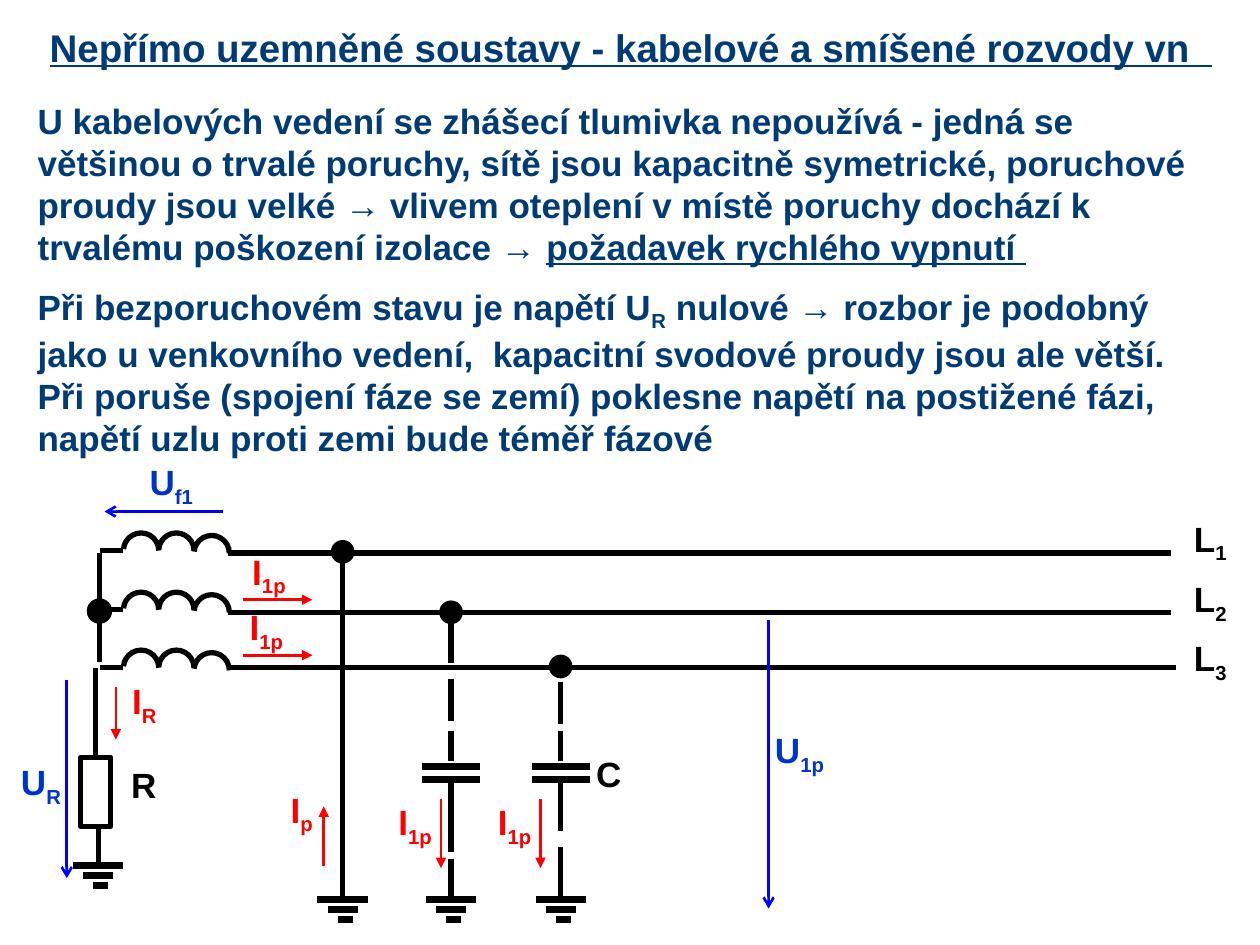
from dataclasses import dataclass
from typing import Optional

from lxml.etree import SubElement
from pptx import Presentation
from pptx.dml.color import RGBColor
from pptx.enum.dml import MSO_LINE_DASH_STYLE as DASH
from pptx.enum.shapes import MSO_CONNECTOR as CONN, MSO_SHAPE as SHAPE
from pptx.enum.text import MSO_ANCHOR as ANCHOR, PP_ALIGN as ALIGN
from pptx.oxml.ns import qn
from pptx.util import Emu, Pt

PX = 9144
FONT = "Arial"
COLORS = {
    "text": "003B76",
    "black": "000000",
    "current": "FF0000",
    "voltage": "0000FF",
    "voltage_label": "0033CC",
}


@dataclass(frozen=True)
class Wire:
    x1: int
    y1: int
    x2: int
    y2: int
    color: str = "black"
    width: float = 3
    dash: Optional[DASH] = None
    arrow: Optional[str] = None


@dataclass(frozen=True)
class Label:
    x: int
    y: int
    w: int
    h: int
    base: str
    sub: str = ""
    color: str = "black"


@dataclass(frozen=True)
class Phase:
    name: str
    coil_y: int
    line_y: int
    end_x: int
    label_y: int


@dataclass(frozen=True)
class Ground:
    x: int
    y: int
    stem_y: int


@dataclass(frozen=True)
class Node:
    x: int
    y: int
    width: int = 2


PHASES = [
    Phase("1", 437, 439, 929, 413),
    Phase("2", 484, 486, 929, 461),
    Phase("3", 530, 530, 933, 508),
]
GROUNDS = [Ground(78, 687, 656)] + [Ground(x, 714, 682) for x in (272, 358, 445)]
CAPACITORS = [358, 445]
NODES = [Node(79, 485, 3), Node(272, 438), Node(358, 486), Node(445, 529)]
WIRES = [
    Wire(79, 525, 79, 439),
    Wire(76, 530, 76, 601),
    Wire(272, 446, 272, 682),
    Wire(358, 493, 358, 580, dash=DASH.LONG_DASH),
    Wire(445, 541, 445, 580, dash=DASH.LONG_DASH),
    Wire(358, 643, 358, 682, dash=DASH.LONG_DASH),
    Wire(445, 643, 445, 682, dash=DASH.DASH),
]
CURRENTS = [
    (257, 687, 257, 640),
    (350, 634, 350, 689),
    (429, 634, 429, 689),
    (193, 476, 248, 476),
    (193, 520, 248, 520),
    (92, 545, 92, 587),
]
VOLTAGES = [(53, 540, 53, 697), (177, 406, 83, 406), (610, 492, 610, 721)]
LABELS = [
    Label(100, 602, 28, 41, "R"),
    Label(469, 593, 28, 41, "C"),
    Label(12, 602, 41, 41, "U", "R", "voltage_label"),
    Label(114, 364, 44, 41, "U", "f1", "voltage_label"),
    Label(610, 577, 49, 41, "U", "1p", "voltage_label"),
    Label(311, 634, 37, 41, "I", "1p", "current"),
    Label(390, 634, 37, 41, "I", "1p", "current"),
    Label(195, 435, 37, 41, "I", "1p", "current"),
    Label(193, 479, 37, 41, "I", "1p", "current"),
    Label(100, 538, 29, 41, "I", "R", "current"),
    Label(226, 624, 27, 41, "I", "p", "current"),
]


def px(n: int) -> Emu:
    return Emu(n * PX)


def rgb(name: str) -> RGBColor:
    return RGBColor.from_string(COLORS[name])


def set_font(p, size: int, color: str) -> None:
    p.font.name = FONT
    p.font.size = Pt(size)
    p.font.bold = True
    p.font.color.rgb = rgb(color)


def add_run(p, text: str, sub: bool = False, underline: bool = False) -> None:
    r = p.add_run()
    r.text = text
    if sub:
        r._r.get_or_add_rPr().set("baseline", "-25000")
    if underline:
        r.font.underline = True


def add_text_frame(s, x: int, y: int, w: int, h: int, wrap: bool = True):
    tf = s.shapes.add_textbox(px(x), px(y), px(w), px(h)).text_frame
    tf.word_wrap = wrap
    return tf


def add_wire(s, wire: Wire) -> None:
    sp = s.shapes.add_connector(
        CONN.STRAIGHT, px(wire.x1), px(wire.y1), px(wire.x2), px(wire.y2))
    sp.line.color.rgb = rgb(wire.color)
    sp.line.width = Pt(wire.width)
    if wire.dash is not None:
        sp.line.dash_style = wire.dash
    if wire.arrow:
        SubElement(sp.line._get_or_add_ln(), qn("a:tailEnd"), type=wire.arrow)
    SubElement(sp._element.spPr, qn("a:effectLst"))


def add_outline(s, kind: SHAPE, x: int, y: int, w: int, h: int, width: float = 3):
    sp = s.shapes.add_shape(kind, px(x), px(y), px(w), px(h))
    sp.shadow.inherit = False
    sp.fill.background()
    sp.line.color.rgb = rgb("black")
    sp.line.width = Pt(width)
    return sp


def add_label(s, label: Label) -> None:
    tf = add_text_frame(s, label.x, label.y, label.w, label.h, wrap=False)
    tf.margin_left = tf.margin_right = tf.margin_top = tf.margin_bottom = px(4)
    tf.vertical_anchor = ANCHOR.MIDDLE
    p = tf.paragraphs[0]
    p.alignment = ALIGN.CENTER
    set_font(p, 20, label.color)
    add_run(p, label.base)
    if label.sub:
        add_run(p, label.sub, sub=True)


def add_phase(s, phase: Phase) -> None:
    add_wire(s, Wire(181, phase.line_y, phase.end_x, phase.line_y))
    add_wire(s, Wire(98, phase.coil_y, 79, phase.coil_y))
    for i, drop in enumerate((0, 0, 2)):
        sp = add_outline(s, SHAPE.ARC, 98 + 28 * i, phase.coil_y - 14 + drop, 28, 28)
        sp.adjustments[0] = 111
        sp.adjustments[1] = 0
    add_label(s, Label(941, phase.label_y, 39, 33, "L", phase.name))


def add_ground(s, ground: Ground) -> None:
    add_wire(s, Wire(ground.x, ground.stem_y, ground.x, ground.y))
    for dx, dy, half in ((0, 0, 20), (0, 8, 12), (2, 16, 6)):
        x, y = ground.x + dx, ground.y + dy
        add_wire(s, Wire(x - half, y, x + half, y, width=4))


def add_capacitor(s, x: int) -> None:
    for y in (608, 619):
        add_wire(s, Wire(x - 23, y, x + 23, y, width=4))
    for top in (580, 619):
        add_wire(s, Wire(x, top, x, top + 24))


def add_node(s, node: Node) -> None:
    sp = add_outline(s, SHAPE.OVAL, node.x - 8, node.y - 8, 16, 16, node.width)
    sp.fill.solid()
    sp.fill.fore_color.rgb = rgb("black")


def add_texts(s) -> None:
    tf = add_text_frame(s, 20, 13, 961, 48)
    tf.vertical_anchor = ANCHOR.MIDDLE
    p = tf.paragraphs[0]
    p.alignment = ALIGN.CENTER
    set_font(p, 22, "text")
    p.font.underline = True
    add_run(p, "Nepřímo uzemněné soustavy - kabelové a smíšené rozvody vn  ")

    tf = add_text_frame(s, 20, 74, 961, 296)
    p = tf.paragraphs[0]
    set_font(p, 20, "text")
    add_run(p, "U kabelových vedení se zhášecí tlumivka nepoužívá - jedná se většinou "
               "o trvalé poruchy, sítě jsou kapacitně symetrické, poruchové proudy jsou "
               "velké → vlivem oteplení v místě poruchy dochází k trvalému poškození "
               "izolace → ")
    add_run(p, "požadavek rychlého vypnutí ", underline=True)
    p = tf.add_paragraph()
    set_font(p, 20, "text")
    p.space_before = Pt(10)
    add_run(p, "Při bezporuchovém stavu je napětí U")
    add_run(p, "R", sub=True)
    add_run(p, " nulové → rozbor je podobný jako u venkovního vedení,  kapacitní "
               "svodové proudy jsou ale větší.")
    p = tf.add_paragraph()
    set_font(p, 20, "text")
    add_run(p, "Při poruše (spojení fáze se zemí) poklesne napětí na postižené fázi, "
               "napětí uzlu proti zemi bude téměř fázové")


def main() -> None:
    prs = Presentation()
    prs.slide_width, prs.slide_height = px(1000), px(750)
    s = prs.slides.add_slide(prs.slide_layouts[6])
    add_texts(s)
    arrows = [Wire(*c, "current", 1.5, arrow="triangle") for c in CURRENTS]
    arrows += [Wire(*v, "voltage", 1.5, arrow="arrow") for v in VOLTAGES]
    for draw, items in (
        (add_phase, PHASES), (add_wire, WIRES + arrows), (add_ground, GROUNDS),
        (add_capacitor, CAPACITORS), (add_node, NODES), (add_label, LABELS),
    ):
        for item in items:
            draw(s, item)
    add_outline(s, SHAPE.RECTANGLE, 64, 601, 24, 55)
    prs.save("out.pptx")


if __name__ == "__main__":
    main()
